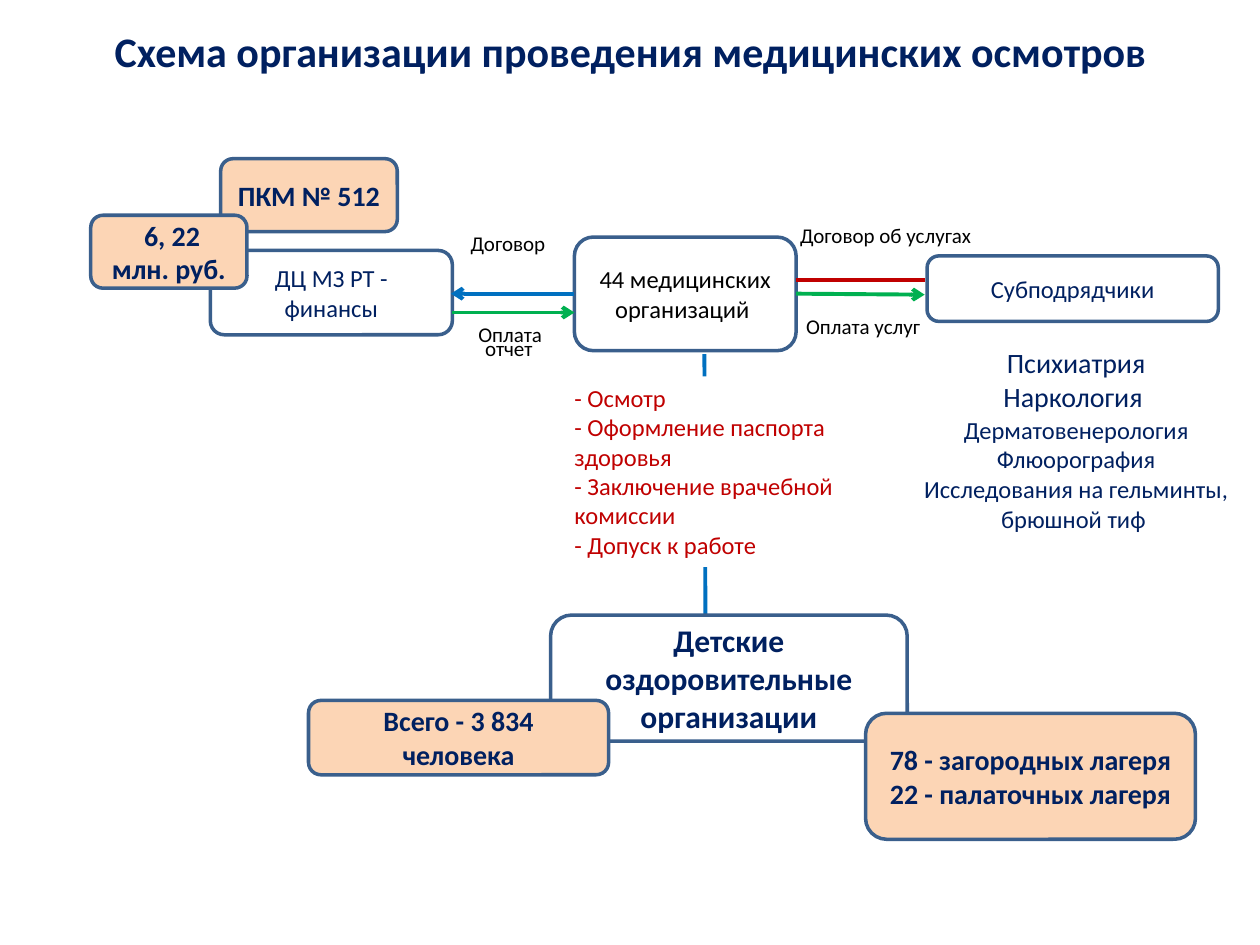
from lxml import etree
from pptx import Presentation
from pptx.dml.color import RGBColor
from pptx.enum.shapes import MSO_CONNECTOR, MSO_SHAPE
from pptx.enum.text import MSO_ANCHOR, PP_ALIGN
from pptx.oxml.ns import qn
from pptx.util import Cm, Pt

LEFT, CENTER = PP_ALIGN.LEFT, PP_ALIGN.CENTER
MIDDLE = MSO_ANCHOR.MIDDLE
FONT = "Calibri"
NAVY, BLACK, WHITE = "002060", "000000", "FFFFFF"
RED, GREEN, BLUE = "C00000", "00B050", "0070C0"
PEACH, OUTLINE = "FCD5B5", "3A5F8C"

TITLE = "Схема организации проведения медицинских осмотров"

# box (left, top, width, height in cm), lines, size, colour
ORGANISATIONS = [
    ((11.1, 12.4, 7.19, 2.54), ["Детские оздоровительные организации"], 18, NAVY),
    ((11.58, 4.78, 4.47, 2.29), ["44 медицинских организаций "], 14, BLACK),
    ((18.69, 5.16, 5.87, 1.32), ["Субподрядчики"], 14, NAVY),
    ((4.24, 5.05, 4.88, 1.7), ["ДЦ МЗ РТ - финансы"], 14, NAVY),
]
FACTS = [
    ((4.45, 3.2, 3.56, 1.47), ["ПКМ № 512"]),
    ((6.22, 14.12, 6.05, 1.5), ["Всего - 3 834 человека"]),
    ((1.83, 4.34, 3.15, 1.47), [" 6, 22 млн. руб."]),
    ((17.45, 14.38, 6.65, 2.54), ["78 - загородных лагеря", "22 - палаточных лагеря"]),
]
# box, text, alignment, wrap
LABELS = [
    ((8.84, 4.52, 2.9, 0.76), "Договор ", CENTER, True),
    ((14.91, 4.37, 5.89, 0.76), "Договор об услугах", CENTER, True),
    ((16, 6.2, 2.95, 0.76), "Оплата услуг", LEFT, False),
    ((9.09, 6.35, 2.39, 0.76), "Оплата", CENTER, True),
    ((9.53, 6.63, 2.39, 0.76), "отчет", LEFT, True),
]
# start, end, colour, arrowhead
FLOWS = [
    ((16.05, 5.64), (18.64, 5.64), RED, False),
    ((16.05, 5.92), (18.64, 5.94), GREEN, True),
    ((9.12, 6.3), (11.58, 6.3), GREEN, True),
    ((11.58, 5.92), (9.09, 5.92), BLUE, True),
]
STEPS = ["- Осмотр", "- Оформление паспорта здоровья",
         "- Заключение врачебной комиссии", "- Допуск к работе"]
# row height, lines, size
SPECIALITIES = [
    (0.68, ["Психиатрия"], 16),
    (0.71, ["Наркология "], 16),
    (2.36, ["Дерматовенерология", "Флюорография",
            "Исследования на гельминты, брюшной тиф "], 14),
]


def rgb(color):
    return RGBColor.from_string(color)


def write(tf, lines, size, color, align=CENTER, bold=False):
    for i, line in enumerate(lines):
        p = tf.paragraphs[0] if i == 0 else tf.add_paragraph()
        p.alignment = align
        r = p.add_run()
        r.text = line
        r.font.name, r.font.size, r.font.bold = FONT, Pt(size), bold
        r.font.color.rgb = rgb(color)


def add_box(s, kind, box, fill=None, line=None):
    sp = s.shapes.add_shape(kind, *map(Cm, box))
    sp.shadow.inherit = False
    if fill:
        sp.fill.solid()
        sp.fill.fore_color.rgb = rgb(fill)
    else:
        sp.fill.background()
    if line:
        sp.line.color.rgb = rgb(line)
        sp.line.width = Pt(2)
    else:
        sp.line.fill.background()
    sp.text_frame.word_wrap = True
    sp.text_frame.vertical_anchor = MIDDLE
    return sp


def add_flow(s, start, end, color, arrow=False):
    c = s.shapes.add_connector(MSO_CONNECTOR.STRAIGHT, *map(Cm, start + end))
    c.line.color.rgb = rgb(color)
    c.line.width = Pt(2.25)
    if arrow:
        etree.SubElement(c.line._get_or_add_ln(), qn("a:tailEnd"), type="arrow")
    etree.SubElement(c._element.spPr, qn("a:effectLst"))


def set_borders(cell, color):
    """Draw 1 pt borders; they must precede the cell's fill in the XML."""
    tcPr = cell._tc.get_or_add_tcPr()
    for i, side in enumerate(("lnL", "lnR", "lnT", "lnB")):
        ln = etree.Element(qn("a:" + side), w=str(Pt(1)))
        fill = etree.SubElement(ln, qn("a:solidFill"))
        etree.SubElement(fill, qn("a:srgbClr"), val=color)
        tcPr.insert(i, ln)


def add_specialities(s):
    height = sum(row[0] for row in SPECIALITIES)
    table = s.shapes.add_table(len(SPECIALITIES), 1, Cm(18.29), Cm(6.99),
                               Cm(6.81), Cm(height)).table
    table.first_row = table.horz_banding = False
    for i, (row_height, lines, size) in enumerate(SPECIALITIES):
        table.rows[i].height = Cm(row_height)
        cell = table.cell(i, 0)
        cell.margin_left = cell.margin_right = Cm(0.05)
        cell.margin_top = cell.margin_bottom = 0
        cell.fill.background()
        set_borders(cell, WHITE)
        write(cell.text_frame, lines, size, NAVY)


def main():
    prs = Presentation()
    prs.slide_width, prs.slide_height = Cm(25.4), Cm(19.05)
    s = prs.slides.add_slide(prs.slide_layouts[5])

    title = s.shapes.title
    title.left, title.top, title.width, title.height = map(Cm, (0.71, 0.33, 24, 1.4))
    title.text_frame.vertical_anchor = MIDDLE
    write(title.text_frame, [TITLE], 24, NAVY, bold=True)

    add_flow(s, (14.2, 7.14), (14.22, 12.4), BLUE)
    for box, lines, size, color in ORGANISATIONS:
        sp = add_box(s, MSO_SHAPE.ROUNDED_RECTANGLE, box, line=OUTLINE)
        write(sp.text_frame, lines, size, color, bold=size == 18)
        if lines == ["Субподрядчики"]:
            sp.adjustments[0] = 0.18

    steps = add_box(s, MSO_SHAPE.RECTANGLE, (11.33, 7.59, 5.79, 3.84), fill=WHITE)
    steps.text_frame.vertical_anchor = MSO_ANCHOR.TOP
    write(steps.text_frame, STEPS, 14, RED, LEFT)

    for flow in FLOWS:
        add_flow(s, *flow)
    for box, text, align, wrap in LABELS:
        tf = s.shapes.add_textbox(*map(Cm, box)).text_frame
        tf.word_wrap = wrap
        write(tf, [text], 12, BLACK, align)
    for box, lines in FACTS:
        sp = add_box(s, MSO_SHAPE.ROUNDED_RECTANGLE, box, PEACH, OUTLINE)
        write(sp.text_frame, lines, 16, NAVY, bold=True)
    add_specialities(s)
    prs.save("out.pptx")


if __name__ == "__main__":
    main()
